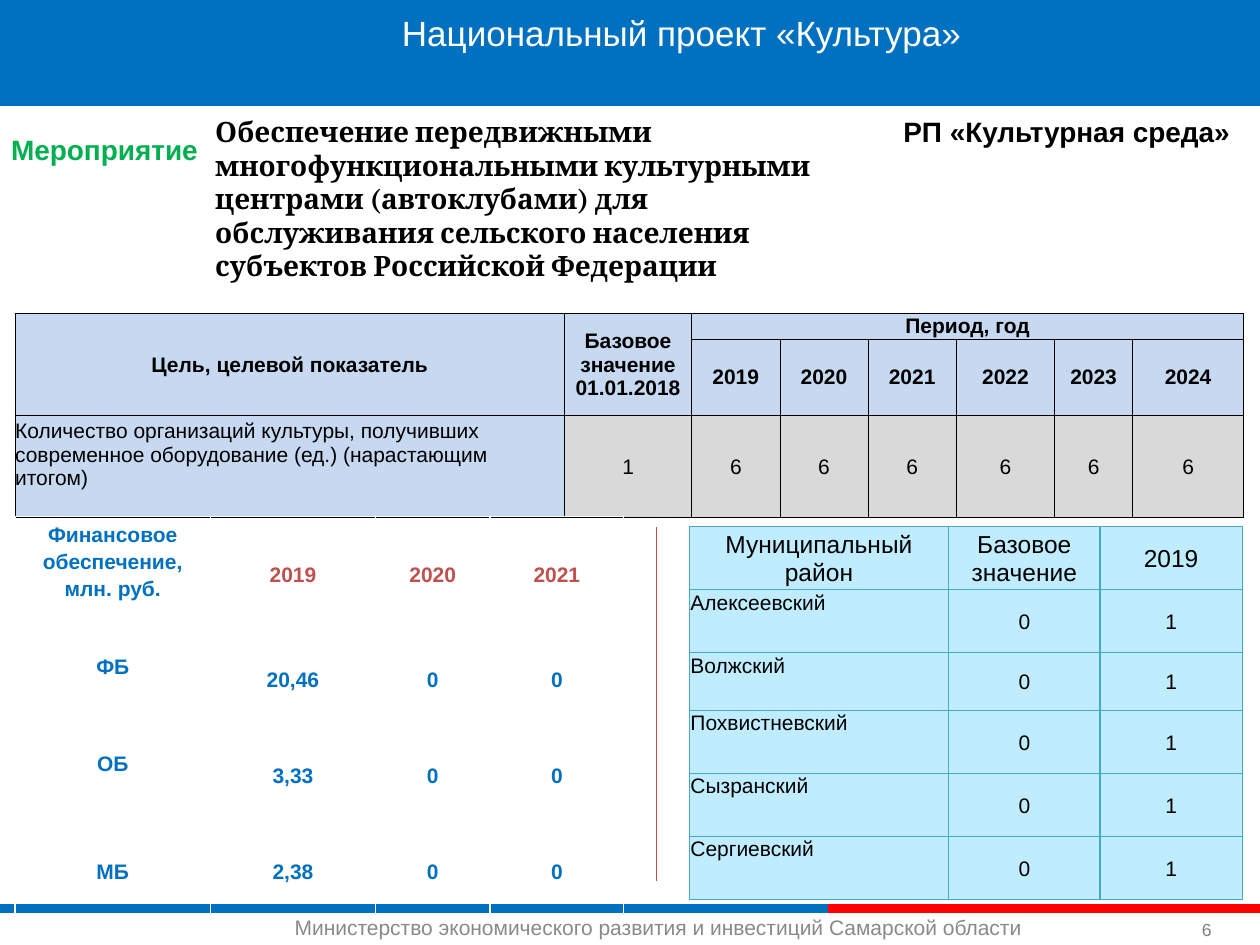
from dataclasses import dataclass

from lxml import etree
from pptx import Presentation
from pptx.dml.color import RGBColor
from pptx.enum.shapes import MSO_CONNECTOR, MSO_SHAPE
from pptx.enum.text import MSO_ANCHOR, PP_ALIGN
from pptx.oxml.ns import qn
from pptx.util import Inches, Pt

LEFT, CENTER, RIGHT = PP_ALIGN.LEFT, PP_ALIGN.CENTER, PP_ALIGN.RIGHT
TOP, MIDDLE, BOTTOM = MSO_ANCHOR.TOP, MSO_ANCHOR.MIDDLE, MSO_ANCHOR.BOTTOM
STRAIGHT, RECTANGLE = MSO_CONNECTOR.STRAIGHT, MSO_SHAPE.RECTANGLE
TITLE_ONLY = 5


@dataclass(frozen=True)
class Theme:
    """Colours, fonts and type sizes of the slide."""
    banner: str = "0070C1"
    blue: str = "0070C0"
    red: str = "FF0000"
    brick: str = "C0504D"
    green: str = "00B050"
    black: str = "000000"
    white: str = "FFFFFF"
    footer: str = "898989"
    number: str = "808080"
    header_fill: str = "C6D9F1"
    value_fill: str = "D9D9D9"
    district_fill: str = "BFECFF"
    district_line: str = "46AAC5"
    sans: str = "Arial"
    serif: str = "Cambria"
    title: int = 20
    heading: int = 16
    subheading: int = 14
    body: int = 12
    small: int = 10


THEME = Theme()


def apply(target, values):
    """Set attributes of an object from a dict."""
    for name, value in values.items():
        setattr(target, name, value)


def write(frame, text, size=THEME.body, color=THEME.black, bold=False,
          font=THEME.sans, align=LEFT, spacing=1.0):
    """Write one formatted paragraph per line of text."""
    for index, line in enumerate(text.split("\n")):
        paragraph = frame.add_paragraph() if index else frame.paragraphs[0]
        apply(paragraph, {"alignment": align, "line_spacing": spacing,
                          "space_before": Pt(0)})
        run = paragraph.add_run()
        run.text = line
        apply(run.font, {"size": Pt(size), "bold": bold, "name": font})
        run.font.color.rgb = RGBColor.from_string(color)


def add_text(slide, box, text, anchor=TOP, **style):
    """Add a wrapping text box."""
    shape = slide.shapes.add_textbox(*map(Inches, box))
    apply(shape.text_frame, {"word_wrap": True, "vertical_anchor": anchor})
    write(shape.text_frame, text, **style)


def add_title(slide, box, text, **style):
    """Place the title placeholder in front of the banner."""
    title = slide.shapes.title
    names = ("left", "top", "width", "height")
    apply(title, dict(zip(names, map(Inches, box))))
    apply(title.text_frame, {"word_wrap": True, "vertical_anchor": TOP})
    write(title.text_frame, text, **style)
    slide.shapes._spTree.append(title._element)


def add_banner(slide, box, color):
    """Add a plain filled rectangle."""
    shape = slide.shapes.add_shape(RECTANGLE, *map(Inches, box))
    shape.shadow.inherit = False
    shape.fill.solid()
    shape.fill.fore_color.rgb = RGBColor.from_string(color)
    shape.line.fill.background()


def add_line(slide, start, end, color, width):
    """Add a straight line without shadow."""
    line = slide.shapes.add_connector(STRAIGHT, *map(Inches, start + end))
    line.line.color.rgb = RGBColor.from_string(color)
    line.line.width = Pt(width)
    etree.SubElement(line._element.spPr, qn("a:effectLst"))


def add_borders(cell, color, width):
    """Draw the four borders of a cell."""
    properties = cell._tc.get_or_add_tcPr()
    for side in ("a:lnL", "a:lnR", "a:lnT", "a:lnB"):
        border = etree.SubElement(properties, qn(side), w=str(Pt(width)))
        fill = etree.SubElement(border, qn("a:solidFill"))
        etree.SubElement(fill, qn("a:srgbClr"), val=color)


def add_table(slide, origin, columns, rows):
    """Add an unstyled table with the given column widths and row heights."""
    box = (*origin, sum(columns), sum(rows))
    table = slide.shapes.add_table(len(rows), len(columns), *map(Inches, box)).table
    apply(table, {"first_row": False, "horz_banding": False})
    for column, width in zip(table.columns, columns):
        column.width = Inches(width)
    for row, height in zip(table.rows, rows):
        row.height = Inches(height)
    return table


def fill_cell(cell, text, margins, fill=None, border=None, anchor=MIDDLE, **style):
    """Format a cell and write its text."""
    names = ("margin_left", "margin_top", "margin_right", "margin_bottom")
    apply(cell, dict(zip(names, map(Inches, margins))))
    cell.vertical_anchor = anchor
    if border:
        add_borders(cell, *border)
    if fill:
        cell.fill.solid()
        cell.fill.fore_color.rgb = RGBColor.from_string(fill)
    else:
        cell.fill.background()
    write(cell.text_frame, text, **style)


def add_targets(slide):
    """Add the table of target indicators by year."""
    table = add_table(slide, (0.12, 2.49), [4.36, 1.01, 0.7, 0.7, 0.7, 0.78, 0.62, 0.88],
                      [0.2, 0.61, 0.81])
    grid = [
        ["Цель, целевой показатель", "Базовое значение\n01.01.2018", "Период, год"] + [""] * 5,
        ["", ""] + [str(year) for year in range(2019, 2025)],
        ["Количество организаций культуры, получивших современное оборудование (ед.) "
         "(нарастающим итогом)", "1"] + ["6"] * 6,
    ]
    for r, texts in enumerate(grid):
        for c, text in enumerate(texts):
            label, header = r == 2 and c == 0, r < 2
            fill_cell(table.cell(r, c), text, (0, 0.03 if label else 0, 0, 0),
                      fill=THEME.header_fill if header or label else THEME.value_fill,
                      border=(THEME.black, 0.5), anchor=TOP if label else MIDDLE,
                      bold=header, align=LEFT if label else CENTER)
    for first, last in (((0, 0), (1, 0)), ((0, 1), (1, 1)), ((0, 2), (0, 7))):
        table.cell(*first).merge(table.cell(*last))


def add_funding(slide):
    """Add the table of funding by budget level."""
    table = add_table(slide, (0.12, 4.1), [1.55, 1.31, 0.91, 1.06], [0.9, 0.77, 0.76, 0.76])
    grid = [["Финансовое обеспечение, млн. руб.", "2019", "2020", "2021"],
            ["ФБ", "20,46", "0", "0"],
            ["ОБ", "3,33", "0", "0"],
            ["МБ", "2,38", "0", "0"]]
    for r, texts in enumerate(grid):
        for c, text in enumerate(texts):
            raised = c == 0 and r < 3
            fill_cell(table.cell(r, c), text, (0.07, 0, 0.07, 0.2 if raised else 0),
                      color=THEME.brick if r == 0 and c else THEME.blue,
                      bold=True, align=CENTER, spacing=1.15)


def add_districts(slide):
    """Add the table of municipal districts."""
    table = add_table(slide, (5.47, 4.18), [2.06, 1.2, 1.13], [0.5, 0.5, 0.46, 0.5, 0.5, 0.5])
    districts = ["Алексеевский", "Волжский", "Похвистневский", "Сызранский", "Сергиевский"]
    grid = [["Муниципальный район", "Базовое значение", "2019"]]
    grid += [[district, "0", "1"] for district in districts]
    for r, texts in enumerate(grid):
        for c, text in enumerate(texts):
            label = r > 0 and c == 0
            fill_cell(table.cell(r, c), text, (0.01, 0.01, 0.01, 0),
                      fill=THEME.district_fill, border=(THEME.district_line, 0.75),
                      anchor=TOP if label else MIDDLE, align=LEFT if label else CENTER,
                      size=THEME.body if r else THEME.subheading)


def main():
    """Build the slide and save it."""
    presentation = Presentation()
    apply(presentation, {"slide_width": Inches(10), "slide_height": Inches(7.5)})
    slide = presentation.slides.add_slide(presentation.slide_layouts[TITLE_ONLY])
    add_line(slide, (0, 7.21), (6.57, 7.21), THEME.banner, 5)
    add_line(slide, (6.57, 7.21), (10, 7.21), THEME.red, 5)
    add_banner(slide, (0, 0, 10, 0.84), THEME.banner)
    add_text(slide, (2.24, 7.21, 6.54, 0.3),
             "Министерство экономического развития и инвестиций Самарской области",
             color=THEME.footer)
    add_text(slide, (9.44, 7.14, 0.41, 0.37), "6", anchor=BOTTOM,
             size=THEME.small, color=THEME.number)
    add_targets(slide)
    add_line(slide, (5.21, 4.18), (5.21, 6.99), THEME.brick, 0.5)
    heading = {"size": THEME.heading, "bold": True}
    add_text(slide, (-0.01, 1, 5.42, 0.37), "Мероприятие", color=THEME.green, **heading)
    add_funding(slide)
    add_text(slide, (4.24, 0.86, 5.62, 0.37), "РП «Культурная среда»", align=RIGHT, **heading)
    add_title(slide, (0.85, 0.04, 9.12, 0.44), "Национальный проект «Культура»",
              size=THEME.title, color=THEME.white, align=CENTER)
    add_text(slide, (1.61, 0.86, 5.28, 1.45),
             "Обеспечение передвижными\nмногофункциональными культурными центрами "
             "(автоклубами) для обслуживания сельского населения субъектов "
             "Российской Федерации", font=THEME.serif, **heading)
    add_districts(slide)
    presentation.save("out.pptx")


if __name__ == "__main__":
    main()
